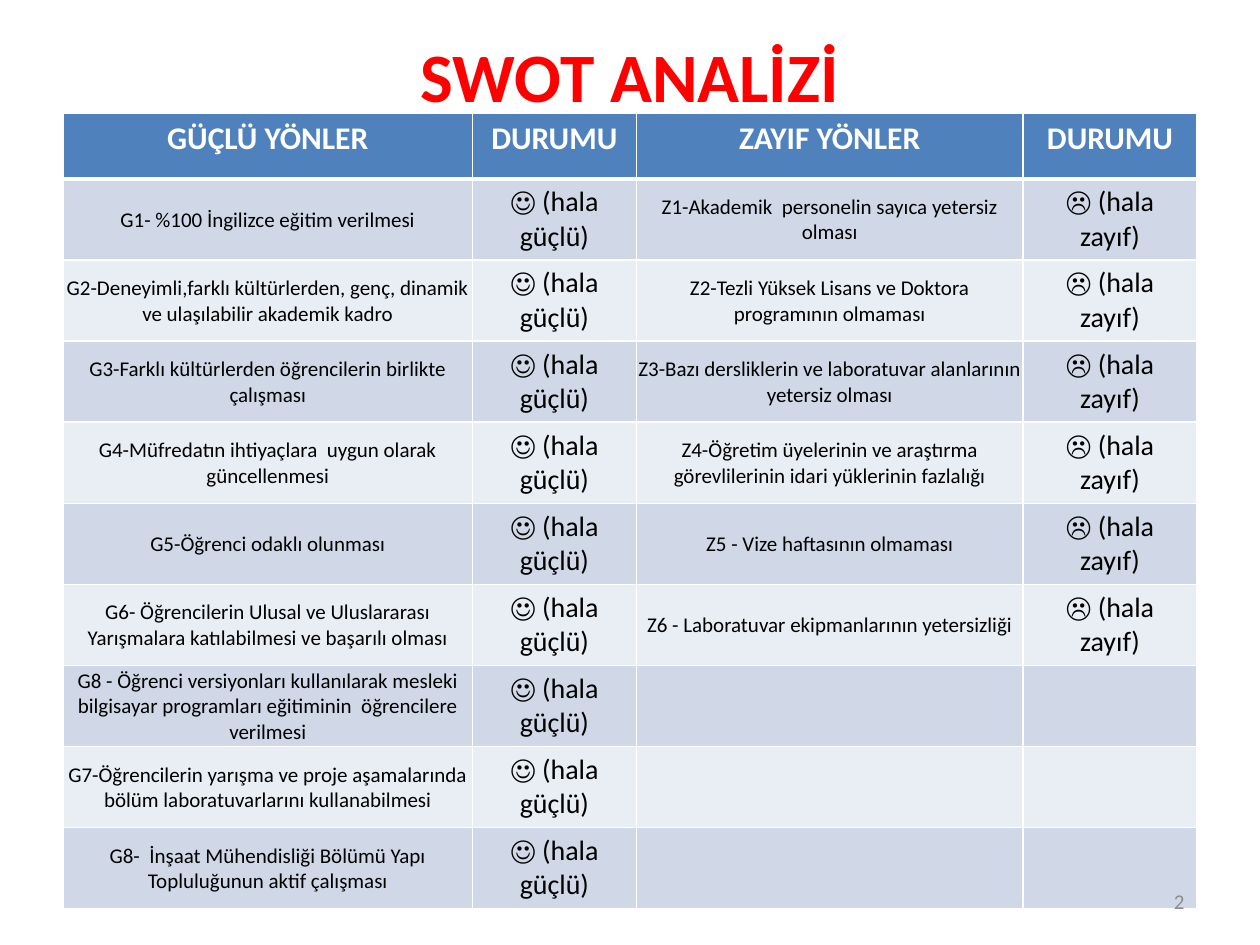
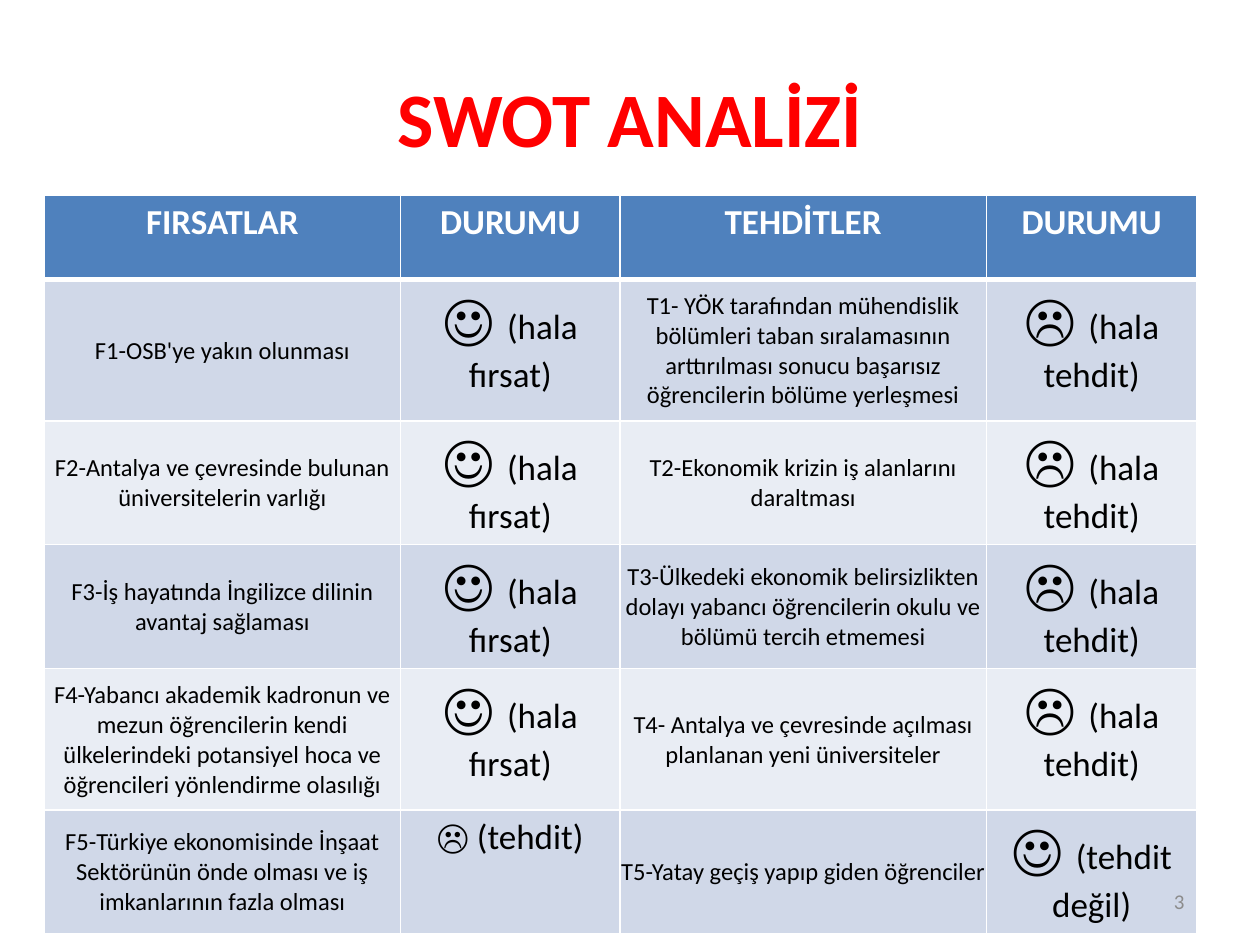
from pptx import Presentation
from pptx.dml.color import RGBColor
from pptx.enum.text import MSO_ANCHOR, PP_ALIGN
from pptx.oxml.ns import qn
from pptx.util import Inches, Pt
from lxml import etree

CENTER, RIGHT = PP_ALIGN.CENTER, PP_ALIGN.RIGHT
TOP, MIDDLE = MSO_ANCHOR.TOP, MSO_ANCHOR.MIDDLE

FONT = "Calibri"
COLORS = {
    "title": "FF0000",
    "header": "4F81BD",
    "header_text": "FFFFFF",
    "band_dark": "D0D8E8",
    "band_light": "E9EDF4",
    "text": "000000",
    "border": "FFFFFF",
    "page_number": "8C8C8C",
}
TITLE_BOX = (0.5, 0.3, 9, 1.25)
NUMBER_BOX = (7.17, 6.95, 2.33, 0.4)
ITEM_MARGINS = {"margin_left": 0.01, "margin_top": 0.01, "margin_right": 0.01, "margin_bottom": 0}
TITLE = "SWOT ANALİZİ"


def status(face, words, face_size, size):
    """Return the spans of a status cell: a face and its words in brackets."""
    return [(f"{face} ", face_size), (f"({words})", size)]


STRONG = status("☺", "hala güçlü", 16, 16)
WEAK = status("☹", "hala zayıf", 16, 16)
OPPORTUNITY = status("☺", "hala fırsat", 32, 20)
THREAT = status("☹", "hala tehdit", 32, 20)
BECAME_THREAT = status("☹", "tehdit", 20, 20)
NO_THREAT = status("☺", "tehdit değil", 32, 20)

STRENGTHS = [
    "G1- %100 İngilizce eğitim verilmesi",
    "G2-Deneyimli,farklı kültürlerden, genç, dinamik ve ulaşılabilir akademik kadro",
    "G3-Farklı kültürlerden öğrencilerin birlikte çalışması",
    "G4-Müfredatın ihtiyaçlara  uygun olarak güncellenmesi",
    "G5-Öğrenci odaklı olunması",
    "G6- Öğrencilerin Ulusal ve Uluslararası Yarışmalara katılabilmesi ve başarılı olması",
    "G8 - Öğrenci versiyonları kullanılarak mesleki bilgisayar programları eğitiminin  "
    "öğrencilere verilmesi",
    "G7-Öğrencilerin yarışma ve proje aşamalarında bölüm laboratuvarlarını kullanabilmesi",
    "G8-  İnşaat Mühendisliği Bölümü Yapı Topluluğunun aktif çalışması",
]
WEAKNESSES = [
    "Z1-Akademik  personelin sayıca yetersiz olması",
    "Z2-Tezli Yüksek Lisans ve Doktora programının olmaması",
    "Z3-Bazı dersliklerin ve laboratuvar alanlarının yetersiz olması",
    "Z4-Öğretim üyelerinin ve araştırma görevlilerinin idari yüklerinin fazlalığı",
    "Z5 - Vize haftasının olmaması",
    "Z6 - Laboratuvar ekipmanlarının yetersizliği",
]
OPPORTUNITIES = [
    "F1-OSB'ye yakın olunması",
    "F2-Antalya ve çevresinde bulunan üniversitelerin varlığı",
    "F3-İş hayatında İngilizce dilinin avantaj sağlaması",
    "F4-Yabancı akademik kadronun ve mezun öğrencilerin kendi ülkelerindeki potansiyel "
    "hoca ve öğrencileri yönlendirme olasılığı",
    "F5-Türkiye ekonomisinde İnşaat Sektörünün önde olması ve iş imkanlarının fazla olması",
]
THREATS = [
    "T1- YÖK tarafından mühendislik bölümleri taban sıralamasının arttırılması sonucu "
    "başarısız öğrencilerin bölüme yerleşmesi",
    "T2-Ekonomik krizin iş alanlarını daraltması",
    "T3-Ülkedeki ekonomik belirsizlikten dolayı yabancı öğrencilerin okulu ve bölümü "
    "tercih etmemesi",
    "T4- Antalya ve çevresinde açılması planlanan yeni üniversiteler",
    "T5-Yatay geçiş yapıp giden öğrenciler",
]

PAGES = [
    {
        "number": 2,
        "title_size": 39.6,
        "title_bottom": 0.72,
        "corner": (0.5, 0.9),
        "widths": [3.25, 1.3, 3.07, 1.38],
        "heights": [0.52] + [0.64] * 9,
        "headings": ["GÜÇLÜ YÖNLER", "DURUMU", "ZAYIF YÖNLER", "DURUMU"],
        "heading_size": 18,
        "item_size": 12,
        "columns": [STRENGTHS, [STRONG] * 9, WEAKNESSES, [WEAK] * 6],
    },
    {
        "number": 3,
        "title_size": 44,
        "title_bottom": 0.05,
        "corner": (0.35, 1.55),
        "widths": [2.83, 1.74, 2.91, 1.67],
        "heights": [0.67, 1.12, 0.98, 0.98, 1.12, 0.98],
        "headings": ["FIRSATLAR", "DURUMU", "TEHDİTLER", "DURUMU"],
        "heading_size": 20,
        "item_size": 14,
        "columns": [
            OPPORTUNITIES,
            [OPPORTUNITY] * 4 + [BECAME_THREAT],
            THREATS,
            [THREAT] * 4 + [NO_THREAT],
        ],
    },
]


def set_all(target, values):
    for name, value in values.items():
        setattr(target, name, value)


def write(frame, spans, color, bold=False, align=CENTER):
    """Fill a text frame with one paragraph of (text, size) spans."""
    para = frame.paragraphs[0]
    para.alignment = align
    for text, size in spans:
        span = para.add_run()
        span.text = text
        set_all(span.font, {"name": FONT, "size": Pt(size), "bold": bold})
        span.font.color.rgb = RGBColor.from_string(COLORS[color])


def place(shape, box):
    set_all(shape, dict(zip(("left", "top", "width", "height"), map(Inches, box))))


def add_title(page, box, size, bottom):
    """A larger bottom inset lifts the title inside its box."""
    title = page.shapes.title
    place(title, box)
    set_all(title.text_frame, {
        "word_wrap": True, "vertical_anchor": MIDDLE, "margin_bottom": Inches(bottom),
    })
    write(title.text_frame, [(TITLE, size)], "title", bold=True)


def add_page_number(page, box, number):
    frame = page.shapes.add_textbox(*map(Inches, box)).text_frame
    set_all(frame, {"word_wrap": True, "vertical_anchor": MIDDLE})
    write(frame, [(str(number), 12)], "page_number", align=RIGHT)


def set_borders(cell, top, bottom):
    """Draw the four borders; top and bottom are widths in points."""
    properties = cell._tc.get_or_add_tcPr()
    for side, width in (("L", 1), ("R", 1), ("T", top), ("B", bottom)):
        line = etree.SubElement(properties, qn(f"a:ln{side}"), w=str(Pt(width)))
        fill = etree.SubElement(line, qn("a:solidFill"))
        etree.SubElement(fill, qn("a:srgbClr"), val=COLORS["border"])


def paint_cell(cell, row):
    set_borders(cell, top=3 if row == 1 else 1, bottom=3 if row == 0 else 1)
    color = "header" if row == 0 else "band_dark" if row % 2 else "band_light"
    cell.fill.solid()
    cell.fill.fore_color.rgb = RGBColor.from_string(COLORS[color])


def add_swot_table(page, corner, widths, heights, headings, heading_size, item_size, columns):
    size = (sum(widths), sum(heights))
    table = page.shapes.add_table(
        len(heights), len(widths), *map(Inches, (*corner, *size))).table
    for row, height in zip(table.rows, heights):
        row.height = Inches(height)

    for index, (width, heading, entries) in enumerate(zip(widths, headings, columns)):
        table.columns[index].width = Inches(width)
        for row in range(len(heights)):
            paint_cell(table.cell(row, index), row)
        write(table.cell(0, index).text_frame, [(heading, heading_size)],
              "header_text", bold=True)
        for row, entry in enumerate(entries, start=1):
            cell = table.cell(row, index)
            is_item = isinstance(entry, str)
            cell.vertical_anchor = MIDDLE if is_item else TOP
            if is_item:
                set_all(cell, {name: Inches(gap) for name, gap in ITEM_MARGINS.items()})
            write(cell.text_frame, [(entry, item_size)] if is_item else entry, "text")


def add_swot_page(deck, number, title_size, title_bottom, **table):
    page = deck.slides.add_slide(deck.slide_layouts.get_by_name("Title Only"))
    add_title(page, TITLE_BOX, title_size, title_bottom)
    add_swot_table(page, **table)
    add_page_number(page, NUMBER_BOX, number)


def main():
    deck = Presentation()
    set_all(deck, {"slide_width": Inches(10), "slide_height": Inches(7.5)})
    for content in PAGES:
        add_swot_page(deck, **content)
    deck.save("out.pptx")


if __name__ == "__main__":
    main()
